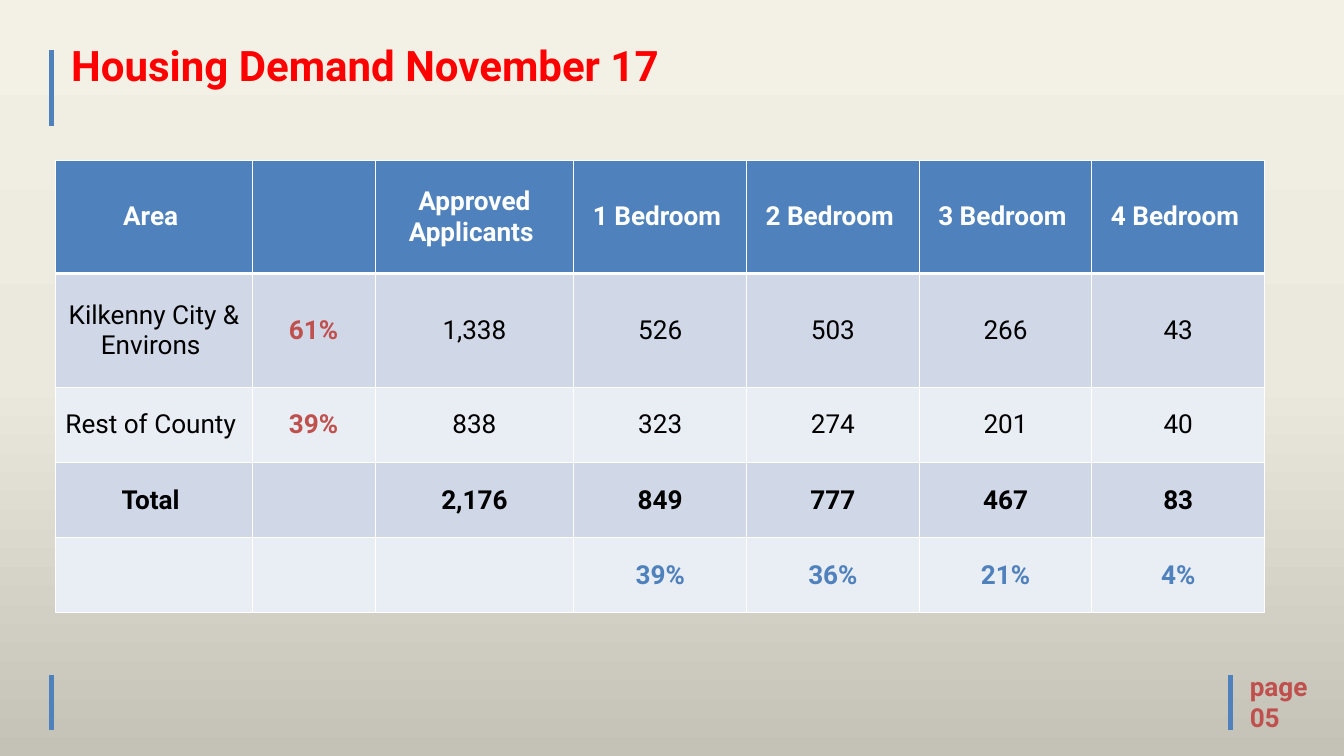
from copy import deepcopy

from lxml.etree import SubElement
from pptx import Presentation
from pptx.dml.color import RGBColor
from pptx.enum.shapes import MSO_CONNECTOR
from pptx.enum.text import MSO_ANCHOR, PP_ALIGN
from pptx.oxml.ns import qn
from pptx.util import Inches, Pt

COLORS = {
    "accent": "4F81BD",
    "title": "FF0000",
    "share": "C0504D",
    "body": "000000",
    "white": "FFFFFF",
    "band_dark": "D0D8E8",
    "band_light": "E9EDF4",
    "sky_top": "F3F1E5",
    "sky_middle": "EBE9DE",
    "sky_bottom": "C4C2B7",
}
FONT = "Roboto"
COLUMN_WIDTHS = [2.92, 1.83, 2.96] + [2.57] * 4
ROW_HEIGHTS = [1.69, 1.69, 1.12, 1.12, 1.12]
DEMAND = [
    ["Area ", "", "Approved Applicants ", "1 Bedroom ", "2 Bedroom ", "3 Bedroom ", "4 Bedroom "],
    ["Kilkenny City & Environs ", "61%", "1,338", "526", "503", "266", "43"],
    ["Rest of County ", "39%", "838", "323", "274", "201", "40"],
    ["Total ", "", "2,176", "849", "777", "467", "83"],
    ["", "", "", "39%", "36%", "21%", "4%"],
]


def rgb(name):
    """Return the named palette colour."""
    return RGBColor.from_string(COLORS[name])


def write(frame, text, size=28, color="body", bold=True, align=PP_ALIGN.LEFT, spacing=None):
    """Fill a text frame with one formatted paragraph per line of text."""
    frame.word_wrap = True
    for index, line in enumerate(text.split("\n")):
        paragraph = frame.add_paragraph() if index else frame.paragraphs[0]
        paragraph.alignment = align
        paragraph.line_spacing = spacing
        paragraph.font.size = Pt(size)
        if line:
            run = paragraph.add_run()
            run.text = line
            run.font.name = FONT
            run.font.size = Pt(size)
            run.font.bold = bold
            run.font.color.rgb = rgb(color)


def add_text(slide, box, text, **style):
    """Place a text box in the given box."""
    label = slide.shapes.add_textbox(*map(Inches, box))
    write(label.text_frame, text, **style)


def add_bar(slide, x, top, height):
    """Draw a vertical accent bar."""
    bar = slide.shapes.add_connector(
        MSO_CONNECTOR.STRAIGHT, Inches(x), Inches(top), Inches(x), Inches(top + height)
    )
    bar.line.color.rgb = rgb("accent")
    bar.line.width = Pt(5)
    SubElement(bar._element.spPr, qn("a:effectLst"))


def paint_background(slide):
    """Apply the three-stop vertical gradient."""
    fill = slide.background.fill
    fill.gradient()
    fill.gradient_angle = 270
    stop_list = next(slide._element.iter(qn("a:gsLst")))
    stop_list.insert(1, deepcopy(stop_list[0]))
    shades = ["sky_top", "sky_middle", "sky_bottom"]
    for stop, position, shade in zip(fill.gradient_stops, [0, 0.5, 1], shades):
        stop.position = position
        stop.color.rgb = rgb(shade)


def set_borders(cell, bottom_width):
    """Give a cell white borders, placed before its fill."""
    properties = cell._tc.get_or_add_tcPr()
    widths = {"a:lnL": 1, "a:lnR": 1, "a:lnT": 1, "a:lnB": bottom_width}
    for index, (side, width) in enumerate(widths.items()):
        border = SubElement(properties, qn(side), w=str(Pt(width)))
        solid = SubElement(border, qn("a:solidFill"))
        SubElement(solid, qn("a:srgbClr"), val=COLORS["white"])
        properties.insert(index, border)


def cell_style(row, column):
    """Return the text colour and weight for a table position."""
    if row == 0:
        return {"color": "white", "bold": True}
    if row == len(DEMAND) - 1:
        return {"color": "accent", "bold": True}
    if column == 1:
        return {"color": "share", "bold": True}
    return {"color": "body", "bold": DEMAND[row][0].startswith("Total")}


def add_demand_table(slide, box):
    """Build the housing demand table in the given box."""
    table = slide.shapes.add_table(len(DEMAND), len(DEMAND[0]), *map(Inches, box)).table
    for column, width in zip(table.columns, COLUMN_WIDTHS):
        column.width = Inches(width)
    for row, height in zip(table.rows, ROW_HEIGHTS):
        row.height = Inches(height)
    for r, values in enumerate(DEMAND):
        band = "accent" if r == 0 else "band_dark" if r % 2 else "band_light"
        for c, value in enumerate(values):
            cell = table.cell(r, c)
            cell.fill.solid()
            cell.fill.fore_color.rgb = rgb(band)
            cell.vertical_anchor = MSO_ANCHOR.MIDDLE
            cell.margin_left = cell.margin_right = cell.margin_top = Inches(0.01)
            cell.margin_bottom = 0
            write(cell.text_frame, value, align=PP_ALIGN.CENTER, **cell_style(r, c))
            set_borders(cell, 1 if r else 3)


def add_header(slide, box):
    """Place the title with its accent bar."""
    left, top, width, height = box
    add_bar(slide, left, top + 0.13, 1.13)
    add_text(slide, (left + 0.19, top, width - 0.19, height),
             "Housing Demand November 17", size=45, color="title", spacing=0.9)


def add_footer(slide, box):
    """Place the footer bars and the page number."""
    left, top, width, height = box
    for x in (left, left + width - 2.09):
        add_bar(slide, x, top + 0.13, 0.81)
    add_text(slide, (left + width - 1.9, top, 1.9, height), "page\n05", color="share")


def main():
    """Build and save the presentation."""
    deck = Presentation()
    deck.slide_width, deck.slide_height = Inches(20), Inches(11.25)
    slide = deck.slides.add_slide(deck.slide_layouts[6])
    paint_background(slide)
    add_header(slide, (0.77, 0.62, 9.73, 2.15))
    add_footer(slide, (0.77, 9.92, 19.63, 1.04))
    add_demand_table(slide, (0.83, 2.38, 18, 6.75))
    deck.save("out.pptx")


if __name__ == "__main__":
    main()
